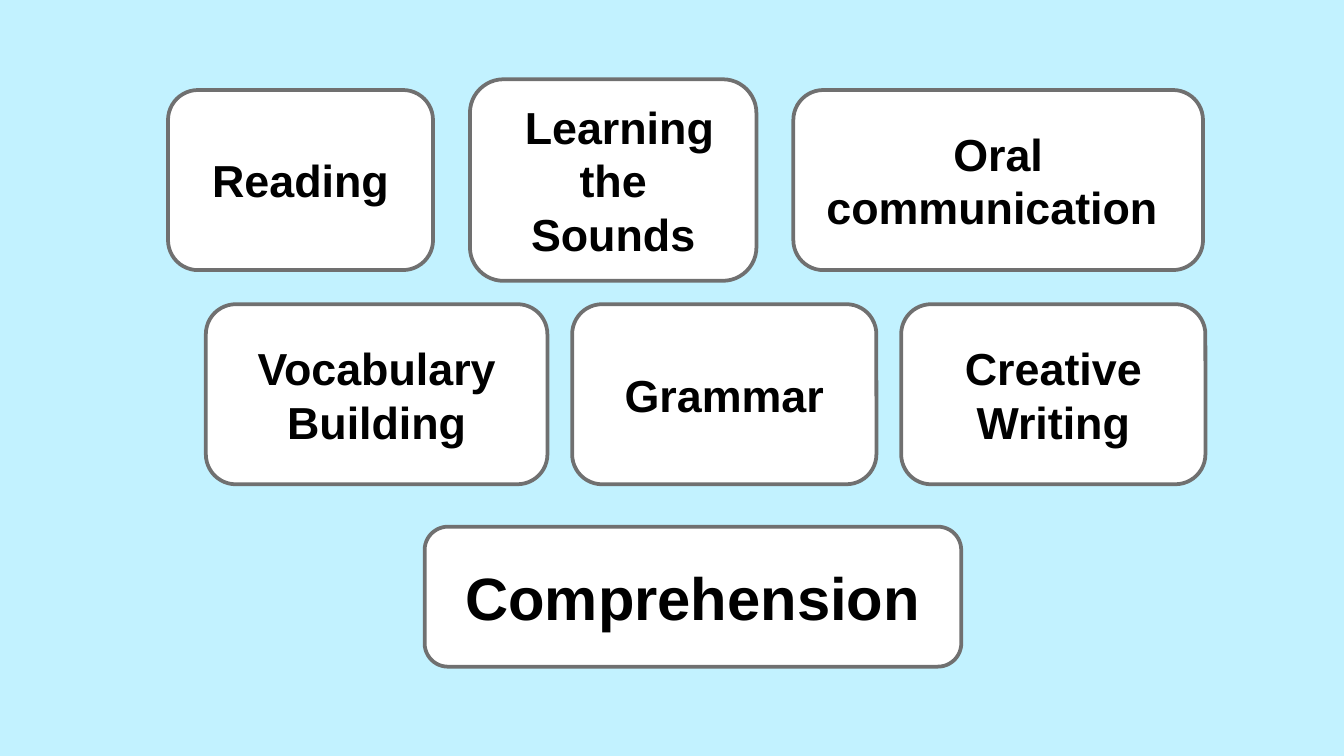
import pptx
import pptx.util
import pptx.dml.color
import pptx.enum.shapes
import pptx.enum.text

Pt = pptx.util.Pt
COLORS = {"sky": "C2F2FF", "card": "FFFFFF", "edge": "707070", "text": "000000"}


def shade(name):
    return pptx.dml.color.RGBColor.from_string(COLORS[name])


def add_card(slide, box, text, size):
    kind = pptx.enum.shapes.MSO_SHAPE.ROUNDED_RECTANGLE
    card = slide.shapes.add_shape(kind, *[Pt(v) for v in box])
    card.shadow.inherit = False
    card.fill.solid()
    card.fill.fore_color.rgb = shade("card")
    card.line.color.rgb = shade("edge")
    card.line.width = Pt(2)
    frame = card.text_frame
    frame.word_wrap = True
    frame.vertical_anchor = pptx.enum.text.MSO_ANCHOR.MIDDLE
    para = frame.paragraphs[0]
    para.alignment = pptx.enum.text.PP_ALIGN.CENTER
    run = para.add_run()
    run.text = text
    run.font.name = "Arial"
    run.font.size = Pt(size)
    run.font.bold = True
    run.font.color.rgb = shade("text")


def add_row(slide, box, cards, size=24):
    left, top, width, height = box
    spare = width - sum(wide for _, wide, _ in cards)
    gap = spare / max(len(cards) - 1, 1)
    for text, wide, high in cards:
        place = (left, top + (height - high) / 2, wide, high)
        add_card(slide, place, text, size)
        left += wide + gap


def main():
    deck = pptx.Presentation()
    deck.slide_width, deck.slide_height = Pt(720), Pt(405)
    slide = deck.slides.add_slide(deck.slide_layouts[6])
    slide.background.fill.solid()
    slide.background.fill.fore_color.rgb = shade("sky")

    add_row(slide, (90, 42.5, 554.5, 108), [
        ("Reading", 142, 96.5),
        (" Learning the Sounds", 153.5, 108),
        ("Oral communication ", 219.5, 96.5),
    ])
    add_row(slide, (110.3, 163, 535.5, 96.5), [
        ("Vocabulary Building", 183, 96.5),
        ("Grammar", 163, 96.5),
        ("Creative Writing", 163, 96.5),
    ])
    add_row(slide, (227.5, 282.2, 287.5, 75), [("Comprehension", 287.5, 75)], 32)
    deck.save("out.pptx")


if __name__ == "__main__":
    main()
